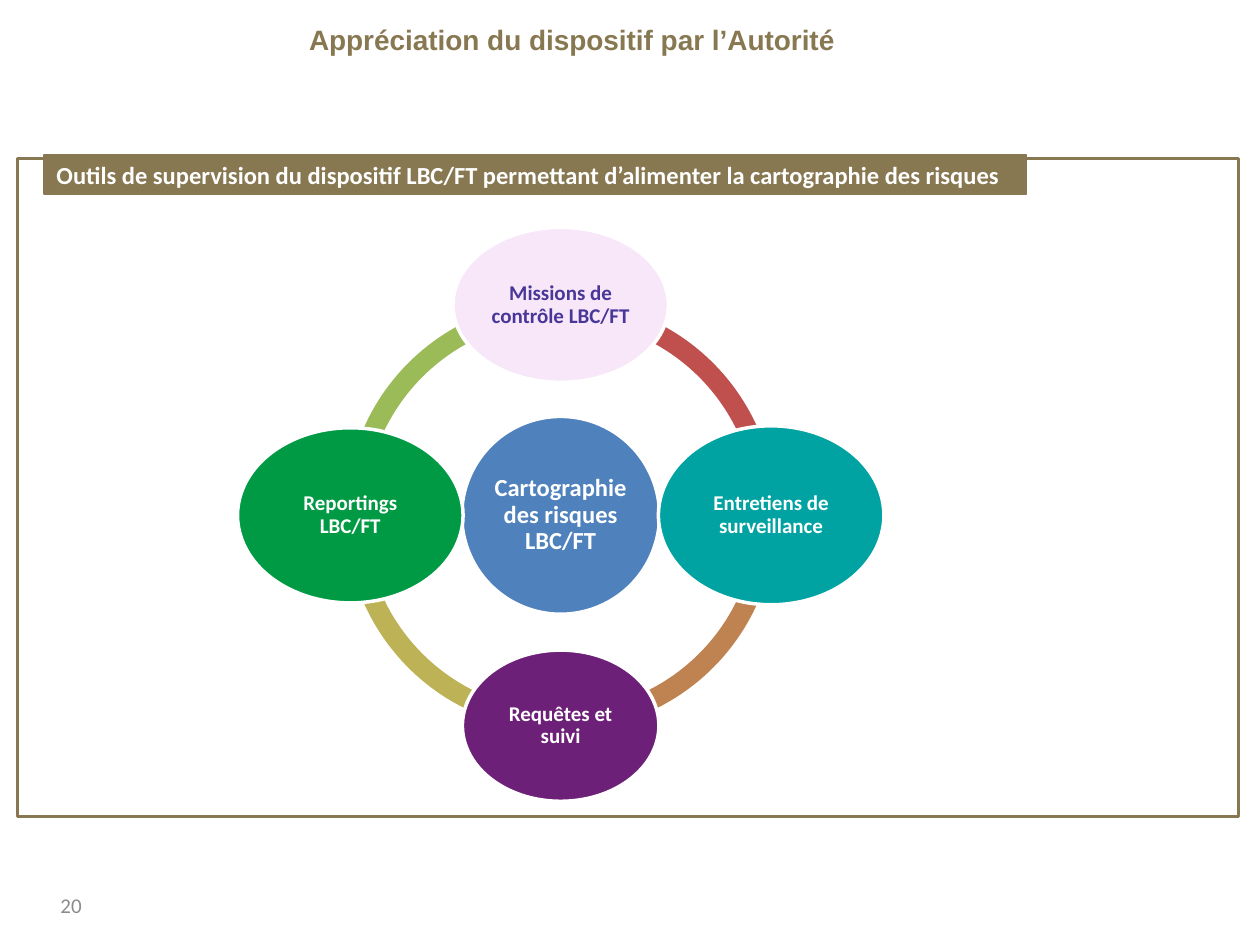
from dataclasses import dataclass
from typing import Optional

from pptx import Presentation
from pptx.dml.color import RGBColor
from pptx.enum.shapes import MSO_SHAPE
from pptx.enum.text import MSO_ANCHOR, PP_ALIGN
from pptx.shapes.autoshape import Shape
from pptx.slide import Slide
from pptx.util import Inches, Pt

BRONZE = RGBColor(0x88, 0x78, 0x52)
WHITE = RGBColor(0xFF, 0xFF, 0xFF)
GREY = RGBColor(0x8C, 0x8C, 0x8C)
INDIGO = RGBColor(0x48, 0x36, 0x98)
BLUE = RGBColor(0x4F, 0x81, 0xBD)
PINK = RGBColor(0xF7, 0xE7, 0xF9)
TEAL = RGBColor(0x00, 0xA3, 0xA1)
PURPLE = RGBColor(0x6D, 0x20, 0x77)
GREEN = RGBColor(0x00, 0x9A, 0x44)
LIME = RGBColor(0x9B, 0xBB, 0x59)
OLIVE = RGBColor(0xBD, 0xB2, 0x55)
ORANGE = RGBColor(0xBE, 0x83, 0x51)
RED = RGBColor(0xC0, 0x50, 0x4D)

CENTER_X, CENTER_Y = 4.45, 4.09
ORBIT = 1.67
RING_SIZE = 3.42
RING_THICKNESS = 0.046
QUARTER_TURN = 54


@dataclass(frozen=True)
class Box:
    """Position and size in inches."""
    left: float
    top: float
    width: float
    height: float


@dataclass(frozen=True)
class Node:
    """Ellipse placed in orbit units from the centre of the ring."""
    text: str
    column: int
    row: int
    width: float
    height: float
    fill: RGBColor
    color: RGBColor = WHITE
    size: float = 12


@dataclass(frozen=True)
class RingQuarter:
    """Quarter of the ring, counted clockwise from the right."""
    quarter: int
    fill: RGBColor


NODES = [
    Node("Cartographie des risques LBC/FT", 0, 0, 1.57, 1.57, BLUE, size=14),
    Node("Missions de contrôle LBC/FT", 0, -1, 1.71, 1.23, PINK, INDIGO),
    Node("Entretiens de surveillance", 1, 0, 1.79, 1.42, TEAL),
    Node("Requêtes et suivi", 0, 1, 1.56, 1.2, PURPLE),
    Node("Reportings LBC/FT", -1, 0, 1.79, 1.39, GREEN),
]
RING = [RingQuarter(2, LIME), RingQuarter(1, OLIVE),
        RingQuarter(0, ORANGE), RingQuarter(3, RED)]


def centered_box(x: float, y: float, width: float, height: float) -> Box:
    """Return a box around a centre point."""
    return Box(x - width / 2, y - height / 2, width, height)


def add_preset(slide: Slide, preset: MSO_SHAPE, box: Box,
               fill: Optional[RGBColor] = None,
               line: Optional[RGBColor] = None, weight: float = 1) -> Shape:
    """Draw a preset shape without shadow."""
    shape = slide.shapes.add_shape(preset, Inches(box.left), Inches(box.top),
                                   Inches(box.width), Inches(box.height))
    shape.shadow.inherit = False
    if fill is None:
        shape.fill.background()
    else:
        shape.fill.solid()
        shape.fill.fore_color.rgb = fill
    if line is None:
        shape.line.fill.background()
    else:
        shape.line.color.rgb = line
        shape.line.width = Pt(weight)
    return shape


def write_text(shape: Shape, text: str, size: float, color: RGBColor,
               alignment: PP_ALIGN = PP_ALIGN.LEFT, bold: bool = True,
               font_name: str = "Calibri", spacing: float = 1,
               margins: tuple[float, float] = (0.1, 0.05)) -> None:
    """Write one paragraph into a shape, with side and vertical margins."""
    frame = shape.text_frame
    frame.word_wrap = True
    frame.vertical_anchor = MSO_ANCHOR.MIDDLE
    side, vertical = margins
    frame.margin_left = frame.margin_right = Inches(side)
    frame.margin_top = frame.margin_bottom = Inches(vertical)
    paragraph = frame.paragraphs[0]
    paragraph.alignment = alignment
    paragraph.line_spacing = spacing
    run = paragraph.add_run()
    run.text = text
    run.font.name = font_name
    run.font.size = Pt(size)
    run.font.bold = bold
    run.font.color.rgb = color


def add_text_box(slide: Slide, box: Box) -> Shape:
    """Add an empty text box."""
    return slide.shapes.add_textbox(Inches(box.left), Inches(box.top),
                                    Inches(box.width), Inches(box.height))


def add_ring_quarter(slide: Slide, part: RingQuarter) -> None:
    """Draw one quarter of the ring."""
    box = centered_box(CENTER_X, CENTER_Y, RING_SIZE, RING_SIZE)
    shape = add_preset(slide, MSO_SHAPE.BLOCK_ARC, box, part.fill)
    shape.adjustments[0] = part.quarter * QUARTER_TURN
    shape.adjustments[1] = (part.quarter + 1) % 4 * QUARTER_TURN
    shape.adjustments[2] = RING_THICKNESS


def add_node(slide: Slide, node: Node) -> None:
    """Draw one labelled ellipse."""
    box = centered_box(CENTER_X + node.column * ORBIT,
                       CENTER_Y + node.row * ORBIT, node.width, node.height)
    shape = add_preset(slide, MSO_SHAPE.OVAL, box, node.fill, WHITE, 2)
    write_text(shape, node.text, node.size, node.color, PP_ALIGN.CENTER,
               spacing=0.9, margins=(0.02, 0.02))


def main() -> None:
    """Build and save the slide."""
    presentation = Presentation()
    presentation.slide_width = Inches(10)
    presentation.slide_height = Inches(7.5)
    slide = presentation.slides.add_slide(presentation.slide_layouts[6])

    page_number = add_text_box(slide, Box(0.12, 6.98, 2.33, 0.4))
    write_text(page_number, "20", 12, GREY, bold=False, margins=(0.36, 0.05))

    add_preset(slide, MSO_SHAPE.RECTANGLE, Box(0.14, 1.26, 9.69, 5.22),
               line=BRONZE, weight=1.5)
    banner = add_preset(slide, MSO_SHAPE.RECTANGLE, Box(0.35, 1.23, 7.8, 0.31),
                        BRONZE, BRONZE, 0.75)
    write_text(banner, "Outils de supervision du dispositif LBC/FT permettant "
               "d’alimenter la cartographie des risques", 14, WHITE,
               margins=(0.1, 0.07))

    for part in RING:
        add_ring_quarter(slide, part)
    for node in NODES:
        add_node(slide, node)

    title = add_text_box(slide, Box(1.35, 0.13, 6.38, 0.37))
    write_text(title, "Appréciation du dispositif par l’Autorité", 16, BRONZE,
               PP_ALIGN.CENTER, font_name="Arial")
    presentation.save("out.pptx")


if __name__ == "__main__":
    main()
